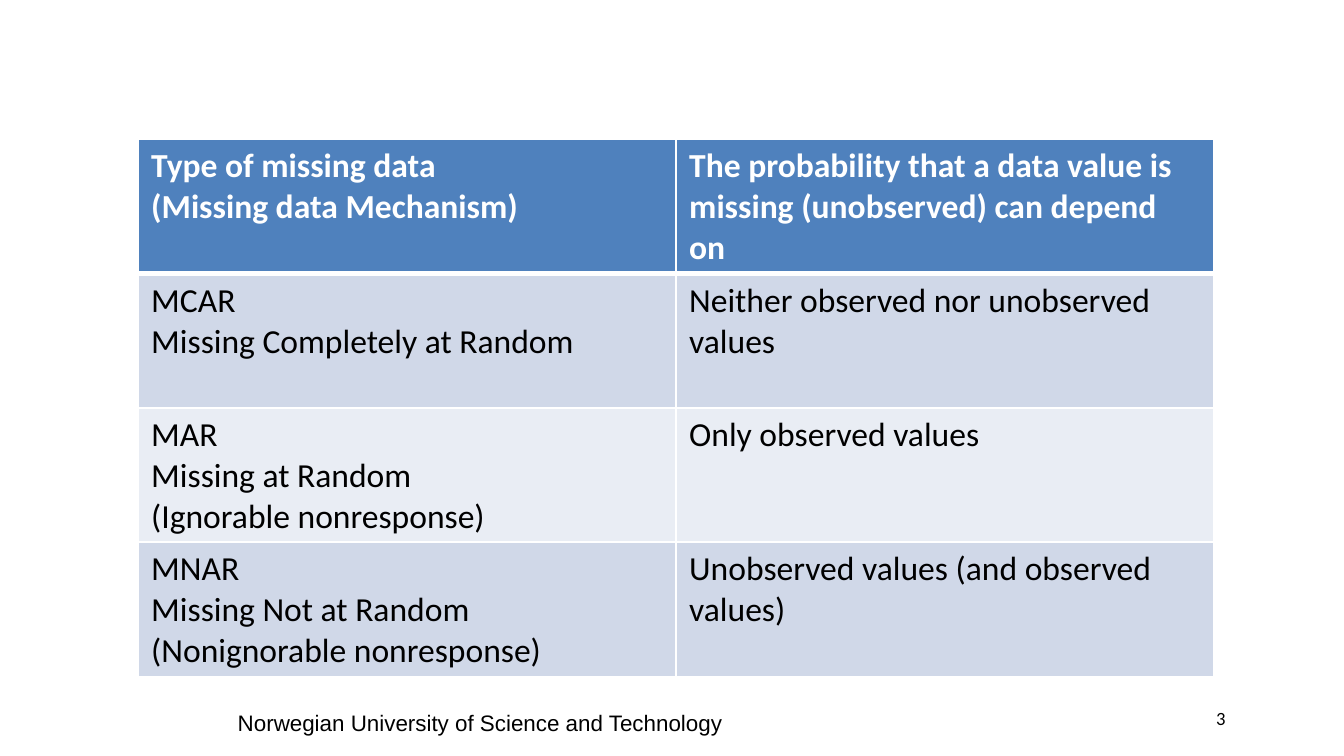
from lxml import etree
from pptx import Presentation
from pptx.dml.color import RGBColor
from pptx.oxml.ns import qn
from pptx.util import Pt

COLORS = {
    "header": "4F81BD",
    "band_dark": "D0D8E8",
    "band_light": "E9EDF4",
    "text": "000000",
    "white": "FFFFFF",
}
BLANK_LAYOUT = 6
ROW_HEIGHT = 72
THIN, THICK = 1, 3

ROWS = [
    ("Type of missing data\n(Missing data Mechanism)",
     "The probability that a data value is missing (unobserved) can depend on"),
    ("MCAR\nMissing Completely at Random",
     "Neither observed nor unobserved values"),
    ("MAR\nMissing at Random\n(Ignorable nonresponse)",
     "Only observed values"),
    ("MNAR\nMissing Not at Random\n(Nonignorable nonresponse)",
     "Unobserved values (and observed values)"),
]


class SlideBuilder:
    """Holds the text style and the slide being filled."""

    def __init__(self, slide):
        self.slide = slide
        self.style = {"name": "Calibri", "size": Pt(18), "bold": False}

    def set_text(self, tf, text, color="text", **changes):
        tf.text = text
        for p in tf.paragraphs:
            for key, value in {**self.style, **changes}.items():
                setattr(p.font, key, value)
            p.font.color.rgb = RGBColor.from_string(COLORS[color])

    def text_box(self, text, left, top, width, height, **changes):
        sp = self.slide.shapes.add_textbox(
            Pt(left), Pt(top), Pt(width), Pt(height))
        sp.text_frame.word_wrap = True
        self.set_text(sp.text_frame, text, **changes)

    def borders(self, cell, top, bottom):
        """Draw white cell borders; they must precede the cell fill."""
        tc_pr = cell._tc.get_or_add_tcPr()
        widths = {"a:lnL": THIN, "a:lnR": THIN, "a:lnT": top, "a:lnB": bottom}
        for tag, width in widths.items():
            ln = etree.SubElement(tc_pr, qn(tag), w=str(Pt(width)))
            fill = etree.SubElement(ln, qn("a:solidFill"))
            etree.SubElement(fill, qn("a:srgbClr"), val=COLORS["white"])

    def table(self, rows, left, top, width):
        table = self.slide.shapes.add_table(
            len(rows), len(rows[0]), Pt(left), Pt(top),
            Pt(width), Pt(ROW_HEIGHT * len(rows))).table
        for i, row in enumerate(rows):
            header = i == 0
            band = "band_dark" if i % 2 else "band_light"
            for j, text in enumerate(row):
                cell = table.cell(i, j)
                self.borders(cell, THICK if i == 1 else THIN,
                             THICK if header else THIN)
                cell.fill.solid()
                cell.fill.fore_color.rgb = RGBColor.from_string(
                    COLORS["header" if header else band])
                self.set_text(cell.text_frame, text,
                              "white" if header else "text", bold=header)


def main():
    prs = Presentation()
    prs.slide_width, prs.slide_height = Pt(720), Pt(405)
    s = SlideBuilder(prs.slides.add_slide(prs.slide_layouts[BLANK_LAYOUT]))
    s.text_box("Norwegian University of Science and Technology",
               120.3, 376.5, 304, 21.6, name="Arial", size=Pt(12))
    s.table(ROWS, 73.8, 74.4, 576.4)
    s.text_box("3", 644.4, 375.1, 39.6, 21.6, size=Pt(10))
    prs.save("out.pptx")


if __name__ == "__main__":
    main()
